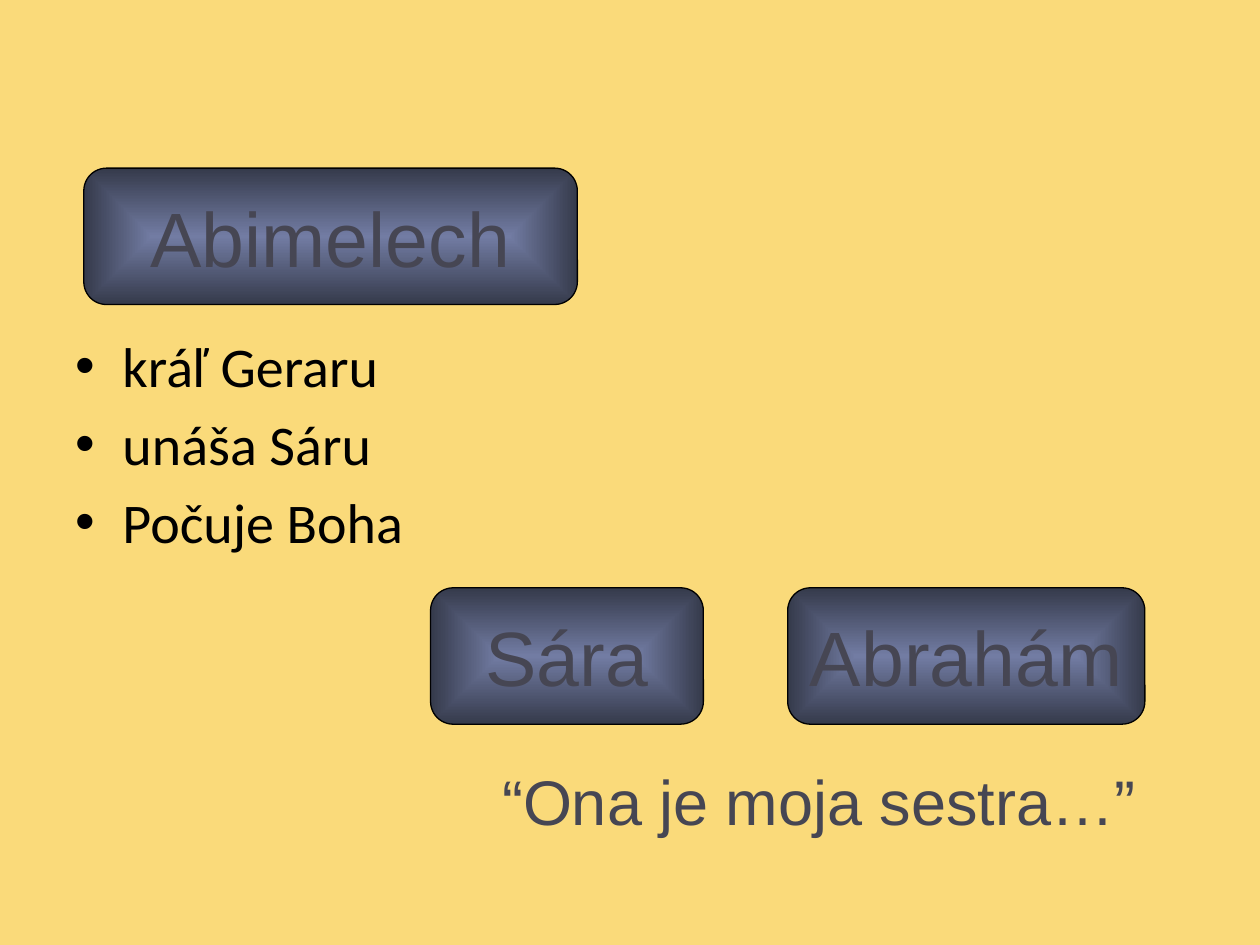
import pptx
import pptx.util
import pptx.dml.color
import pptx.enum.shapes
import pptx.enum.text
import pptx.oxml
import pptx.oxml.ns
from pptx.util import Cm

COLORS = {
    "background": "FADA7A",
    "centre": "727CA3",
    "edge": "353A4B",
    "outline": "000000",
    "name": "464653",
    "facts": "000000",
}

# text, (left, top, width, height) in cm
PEOPLE = [
    ("Abimelech", (1.69, 3.39, 9.95, 2.75)),
    ("Sára", (8.68, 11.85, 5.5, 2.75)),
    ("Abrahám", (15.88, 11.85, 7.2, 2.75)),
]
FACTS = ["kráľ Geraru", "unáša Sáru", "Počuje Boha"]
FACTS_BOX = (1.27, 6.56, 10.8, 5.93)
QUOTE = "“Ona je moja sestra…”"
QUOTE_BOX = (8.89, 15.24, 15.24, 1.78)

NAME_FONT = {"name": "Arial", "size": pptx.util.Pt(44)}
FACT_FONT = {"name": "Calibri", "size": pptx.util.Pt(32)}
QUOTE_FONT = {"name": "Arial", "size": pptx.util.Pt(36)}
INDENT = Cm(0.95)
CENTER = pptx.enum.text.PP_ALIGN.CENTER


def rgb(role):
    return pptx.dml.color.RGBColor.from_string(COLORS[role])


def write(paragraph, text, font, role, **layout):
    run = paragraph.add_run()
    run.text = text
    for key, value in font.items():
        setattr(run.font, key, value)
    run.font.color.rgb = rgb(role)
    for key, value in layout.items():
        setattr(paragraph, key, value)


def fill_from_centre(shape):
    """Fill with a rectangular gradient, light in the middle."""
    shape.fill.gradient()
    for stop, role in zip(shape.fill.gradient_stops, ("centre", "edge")):
        stop.color.rgb = rgb(role)
    gradient = shape.element.spPr.find(pptx.oxml.ns.qn("a:gradFill"))
    linear = gradient.find(pptx.oxml.ns.qn("a:lin"))
    gradient.replace(linear, pptx.oxml.parse_xml(
        f'<a:path {pptx.oxml.ns.nsdecls("a")} path="rect">'
        '<a:fillToRect l="50000" t="50000" r="50000" b="50000"/></a:path>'))


def add_person(slide, name, box):
    plate = slide.shapes.add_shape(
        pptx.enum.shapes.MSO_SHAPE.ROUNDED_RECTANGLE, *map(Cm, box))
    plate.shadow.inherit = False
    fill_from_centre(plate)
    plate.line.color.rgb = rgb("outline")
    plate.line.width = pptx.util.Pt(0.75)
    frame = plate.text_frame
    frame.word_wrap = False
    frame.vertical_anchor = pptx.enum.text.MSO_ANCHOR.MIDDLE
    write(frame.paragraphs[0], name, NAME_FONT, "name", alignment=CENTER)


def add_text_frame(slide, box):
    frame = slide.shapes.add_textbox(*map(Cm, box)).text_frame
    frame.word_wrap = True
    return frame


def add_bullet(paragraph):
    properties = paragraph._p.get_or_add_pPr()
    properties.set("marL", str(INDENT))
    properties.set("indent", str(-INDENT))
    for tag in ('buFont typeface="Arial"', 'buChar char="•"'):
        name, attribute = tag.split()
        properties.append(pptx.oxml.parse_xml(
            f'<a:{name} {pptx.oxml.ns.nsdecls("a")} {attribute}/>'))


def main():
    deck = pptx.Presentation()
    deck.slide_width, deck.slide_height = Cm(25.4), Cm(19.05)
    slide = deck.slides.add_slide(deck.slide_layouts[6])
    slide.background.fill.solid()
    slide.background.fill.fore_color.rgb = rgb("background")

    for name, box in PEOPLE:
        add_person(slide, name, box)

    facts = add_text_frame(slide, FACTS_BOX)
    for index, fact in enumerate(FACTS):
        paragraph = facts.add_paragraph() if index else facts.paragraphs[0]
        write(paragraph, fact, FACT_FONT, "facts",
              space_before=pptx.util.Pt(6))
        add_bullet(paragraph)

    quote = add_text_frame(slide, QUOTE_BOX)
    write(quote.paragraphs[0], QUOTE, QUOTE_FONT, "name",
          alignment=CENTER, space_before=pptx.util.Pt(4))

    deck.save("out.pptx")


if __name__ == "__main__":
    main()
